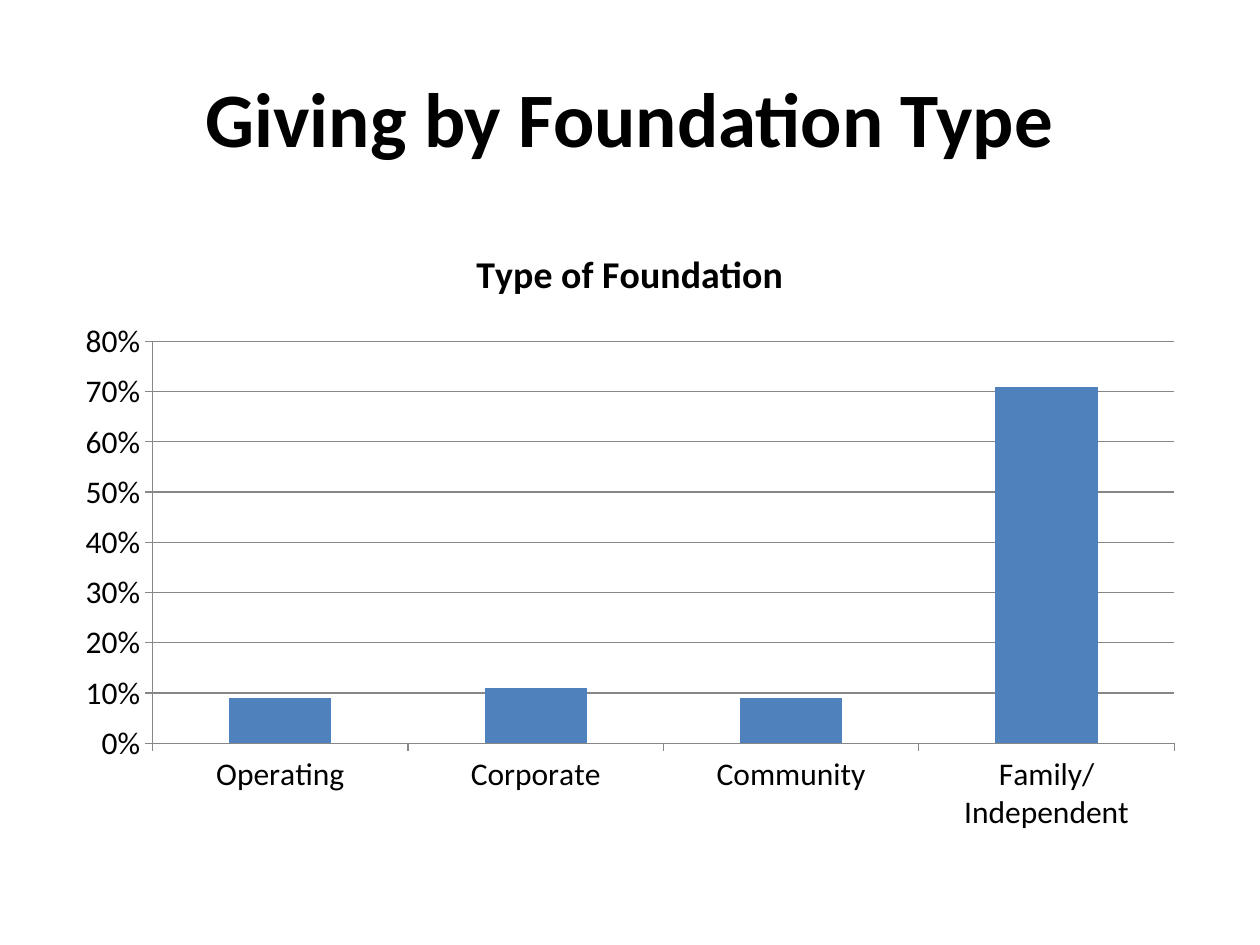
from dataclasses import dataclass

from pptx import Presentation
from pptx.chart.data import CategoryChartData
from pptx.dml.color import RGBColor
from pptx.enum.chart import XL_CHART_TYPE, XL_TICK_MARK
from pptx.enum.text import MSO_ANCHOR, PP_ALIGN
from pptx.util import Cm, Pt

COLUMN = XL_CHART_TYPE.COLUMN_CLUSTERED
OUTSIDE = XL_TICK_MARK.OUTSIDE
MIDDLE = MSO_ANCHOR.MIDDLE
CENTER = PP_ALIGN.CENTER

TITLE = "Giving by Foundation Type"
CHART_TITLE = "Type of Foundation"
GIVING_SHARES = {
    "Operating": 0.09,
    "Corporate": 0.11,
    "Community": 0.09,
    "Family/Independent": 0.71,
}


@dataclass(frozen=True)
class Theme:
    font: str = "Calibri"
    text: RGBColor = RGBColor(0, 0, 0)
    column: RGBColor = RGBColor(0x4F, 0x81, 0xBD)
    line: RGBColor = RGBColor(0x87, 0x87, 0x87)
    title_size: float = 44
    chart_title_size: float = 21.6
    label_size: float = 18
    line_width: float = 0.75


THEME = Theme()
SLIDE_WIDTH, SLIDE_HEIGHT = Cm(25.4), Cm(19.05)
MARGIN = Cm(1.27)
CONTENT_WIDTH = SLIDE_WIDTH - 2 * MARGIN
TITLE_TOP, TITLE_HEIGHT = Cm(0.76), Cm(3.18)
CHART_TOP, CHART_HEIGHT = Cm(4.45), Cm(12.57)


def style_font(font, size, bold=False):
    font.name = THEME.font
    font.size = Pt(size)
    font.bold = bold
    font.color.rgb = THEME.text


def style_line(line):
    line.color.rgb = THEME.line
    line.width = Pt(THEME.line_width)


def add_title(slide):
    title = slide.shapes.title
    title.left, title.top = MARGIN, TITLE_TOP
    title.width, title.height = CONTENT_WIDTH, TITLE_HEIGHT
    text_frame = title.text_frame
    text_frame.text = TITLE
    text_frame.vertical_anchor = MIDDLE
    paragraph = text_frame.paragraphs[0]
    paragraph.alignment = CENTER
    style_font(paragraph.runs[0].font, THEME.title_size, bold=True)


def add_giving_chart(slide):
    chart_data = CategoryChartData(number_format="0%")
    chart_data.categories = list(GIVING_SHARES)
    chart_data.add_series("Series 1", list(GIVING_SHARES.values()))
    chart = slide.shapes.add_chart(
        COLUMN, MARGIN, CHART_TOP, CONTENT_WIDTH, CHART_HEIGHT, chart_data
    ).chart
    style_font(chart.font, THEME.label_size)
    chart.has_legend = False
    chart.has_title = True
    title_frame = chart.chart_title.text_frame
    title_frame.text = CHART_TITLE
    style_font(title_frame.paragraphs[0].runs[0].font, THEME.chart_title_size, bold=True)
    chart.chart_title.include_in_layout = False

    for axis in (chart.category_axis, chart.value_axis):
        axis.major_tick_mark = OUTSIDE
        style_line(axis.format.line)
    value_axis = chart.value_axis
    value_axis.minimum_scale, value_axis.maximum_scale = 0, 0.8
    value_axis.major_unit = 0.1
    value_axis.tick_labels.number_format = "0%"
    value_axis.tick_labels.number_format_is_linked = False
    value_axis.has_major_gridlines = True
    style_line(value_axis.major_gridlines.format.line)

    plot = chart.plots[0]
    plot.gap_width = 150
    plot.vary_by_categories = False
    fill = plot.series[0].format.fill
    fill.solid()
    fill.fore_color.rgb = THEME.column


def main():
    presentation = Presentation()
    presentation.slide_width, presentation.slide_height = SLIDE_WIDTH, SLIDE_HEIGHT
    title_only = presentation.slide_layouts.get_by_name("Title Only")
    slide = presentation.slides.add_slide(title_only)
    add_title(slide)
    add_giving_chart(slide)
    presentation.save("out.pptx")


if __name__ == "__main__":
    main()
